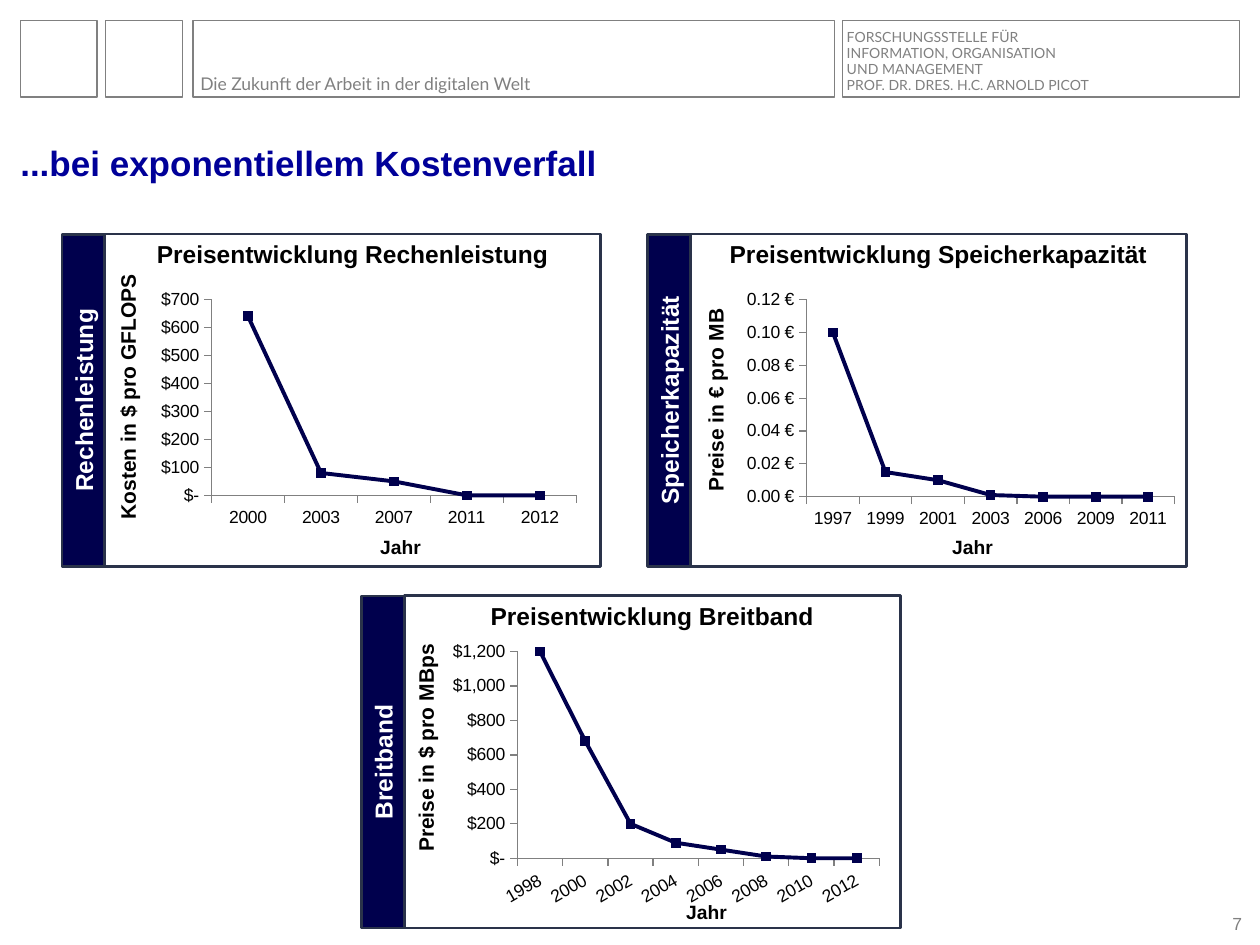
from dataclasses import dataclass

from lxml import etree
from pptx import Presentation
from pptx.chart.data import CategoryChartData
from pptx.dml.color import RGBColor
from pptx.enum.chart import XL_CHART_TYPE as ChartType, XL_MARKER_STYLE as Marker, XL_TICK_MARK as Tick
from pptx.enum.shapes import MSO_SHAPE as Shape
from pptx.enum.text import MSO_ANCHOR as Anchor, PP_ALIGN as Align
from pptx.oxml.ns import qn
from pptx.util import Cm, Pt

WHITE = RGBColor(0xFF, 0xFF, 0xFF)
BLACK = RGBColor(0, 0, 0)
GRAY = RGBColor(0x80, 0x80, 0x80)
NAVY = RGBColor(0, 0, 0x4D)
SLATE = RGBColor(0x2A, 0x33, 0x4A)
BLUE = RGBColor(0, 0, 0x99)

PANEL_WIDTH, PANEL_HEIGHT, STRIP_WIDTH = 10, 6.7, 0.86
DOLLAR = '"$"#,##0;-"$"#,##0;"$-"'
EURO = '#,##0.00\\ "€"'


@dataclass
class Panel:
    name: str
    corner: tuple
    axis_title: str
    axis_center: tuple
    axis_length: float
    year_offset: tuple
    chart_area: tuple
    plot_area: tuple
    years: tuple
    prices: tuple
    price_format: str
    top_price: float
    price_step: float
    year_angle: int = 0


PANELS = (
    Panel("Speicherkapazität", (13.92, 4.72), "Preise in € pro MB", (0.5, 3.35), 4.47,
          (4.72, 6.05), (1, 1.02, 8.94, 5.03), (0.15, 0.06, 0.83, 0.79),
          (1997, 1999, 2001, 2003, 2006, 2009, 2011),
          (0.1, 0.015, 0.01, 0.001, 0, 0, 0), EURO, 0.12, 0.02),
    Panel("Rechenleistung", (2.11, 4.72), "Kosten in $ pro GFLOPS", (0.46, 3.28), 5.33,
          (5, 6.05), (0.81, 1.02, 8.97, 5), (0.15, 0.06, 0.82, 0.79),
          (2000, 2003, 2007, 2011, 2012),
          (640, 80, 50, 0, 0), DOLLAR, 700, 100),
    Panel("Breitband", (8.15, 12.01), "Preise in $ pro MBps", (0.43, 3.07), 4.52,
          (5.13, 6.12), (0.64, 0.79, 9.12, 5.56), (0.18, 0.06, 0.8, 0.75),
          (1998, 2000, 2002, 2004, 2006, 2008, 2010, 2012),
          (1200, 680, 200, 90, 50, 10, 0, 0), DOLLAR, 1200, 200, -30),
)


class SlideBuilder:
    font = "Arial"
    header_font = "Lato"

    def __init__(self, deck):
        self.slide = deck.slides.add_slide(deck.slide_layouts[5])
        self.shapes = self.slide.shapes

    def fill_text(self, shape, text, size, color, bold=False, font=None, align=Align.LEFT,
                  anchor=Anchor.BOTTOM, inset=0, wrap=True, spacing=None):
        frame = shape.text_frame
        frame.text = text
        frame.word_wrap = wrap
        frame.vertical_anchor = anchor
        frame.margin_left = frame.margin_right = Cm(inset)
        frame.margin_top = frame.margin_bottom = Cm(inset)
        for para in frame.paragraphs:
            para.alignment = align
            para.line_spacing = spacing
            for span in para.runs:
                span.font.name = font or self.font
                span.font.size = Pt(size)
                span.font.bold = bold
                span.font.color.rgb = color

    def title(self, text, left, top, width, height):
        title = self.shapes.title
        title.left, title.top = Cm(left), Cm(top)
        title.width, title.height = Cm(width), Cm(height)
        self.fill_text(title, text, 20, BLUE, bold=True)

    def rectangle(self, left, top, width, height, fill=None, line=None, weight=1.5):
        box = self.shapes.add_shape(Shape.RECTANGLE, Cm(left), Cm(top), Cm(width), Cm(height))
        box.shadow.inherit = False
        if fill is None:
            box.fill.background()
        else:
            box.fill.solid()
            box.fill.fore_color.rgb = fill
        if line is None:
            box.line.fill.background()
        else:
            box.line.color.rgb = line
            box.line.width = Pt(weight)
        return box

    def label(self, text, left, top, width, height, size, color, **style):
        box = self.shapes.add_textbox(Cm(left), Cm(top), Cm(width), Cm(height))
        self.fill_text(box, text, size, color, **style)
        return box

    def panel(self, panel):
        left, top = panel.corner
        frame = self.rectangle(left, top, PANEL_WIDTH, PANEL_HEIGHT, WHITE, SLATE)
        self.fill_text(frame, f"Preisentwicklung {panel.name}", 14, BLACK, bold=True,
                       align=Align.CENTER, anchor=Anchor.TOP, inset=0.1)

        strip = self.rectangle(left - (PANEL_HEIGHT + STRIP_WIDTH) / 2,
                               top + (PANEL_HEIGHT - STRIP_WIDTH) / 2,
                               PANEL_HEIGHT, STRIP_WIDTH, NAVY, SLATE)
        strip.rotation = 270
        self.fill_text(strip, panel.name, 14, WHITE, bold=True, align=Align.CENTER,
                       anchor=Anchor.MIDDLE)

        across, down = panel.axis_center
        height = 0.71
        axis_title = self.label(panel.axis_title, left + across - panel.axis_length / 2,
                                top + down - height / 2, panel.axis_length, height,
                                12, BLACK, bold=True, align=Align.CENTER,
                                anchor=Anchor.MIDDLE, inset=0.1, wrap=False)
        axis_title.rotation = 270

        across, down = panel.year_offset
        year = self.rectangle(left + across, top + down, 1.93, 0.48, WHITE)
        self.fill_text(year, "Jahr", 11, BLACK, bold=True, align=Align.CENTER)
        self.chart(panel)

    def chart(self, panel):
        data = CategoryChartData()
        data.categories = [str(year) for year in panel.years]
        data.add_series("Series 1", panel.prices)
        left, top = panel.corner
        across, down, width, height = panel.chart_area
        chart = self.shapes.add_chart(ChartType.LINE_MARKERS, Cm(left + across), Cm(top + down),
                                      Cm(width), Cm(height), data).chart
        chart.has_title = False
        chart.has_legend = False
        chart.font.name = self.font
        chart.font.size = Pt(10)
        chart.font.color.rgb = BLACK

        plot = chart.plots[0]
        plot.vary_by_categories = False
        series = plot.series[0]
        series.smooth = False
        series.format.line.color.rgb = NAVY
        series.format.line.width = Pt(2.25)
        series.marker.style = Marker.SQUARE
        series.marker.size = 5
        series.marker.format.fill.solid()
        series.marker.format.fill.fore_color.rgb = NAVY
        series.marker.format.line.color.rgb = NAVY

        prices, years = chart.value_axis, chart.category_axis
        for axis in (prices, years):
            axis.has_major_gridlines = False
            axis.major_tick_mark = Tick.OUTSIDE
            axis.minor_tick_mark = Tick.NONE
            axis.format.line.color.rgb = GRAY
            axis.format.line.width = Pt(0.75)
            axis.tick_labels.font.size = Pt(10)
        prices.minimum_scale = 0
        prices.maximum_scale = panel.top_price
        prices.major_unit = panel.price_step
        prices.tick_labels.number_format = panel.price_format
        prices.tick_labels.number_format_is_linked = False
        years._element.find(qn("c:txPr")).find(qn("a:bodyPr")).set("rot", str(panel.year_angle * 60000))
        self.place_plot(chart, panel.plot_area)

    def place_plot(self, chart, area):
        plot_area = chart._chartSpace.find(qn("c:chart")).find(qn("c:plotArea"))
        layout = plot_area.find(qn("c:layout"))
        if layout is None:
            layout = etree.Element(qn("c:layout"))
            plot_area.insert(0, layout)
        manual = etree.SubElement(layout, qn("c:manualLayout"))
        settings = [("layoutTarget", "inner"), ("xMode", "edge"), ("yMode", "edge")]
        for tag, value in settings + list(zip("xywh", area)):
            etree.SubElement(manual, qn(f"c:{tag}")).set("val", str(value))


def main():
    deck = Presentation()
    deck.slide_width, deck.slide_height = Cm(25.4), Cm(19.05)
    builder = SlideBuilder(deck)

    for left, width in ((3.89, 12.93), (2.13, 1.55), (0.41, 1.55), (16.99, 8)):
        builder.rectangle(left, 0.41, width, 1.55, line=GRAY, weight=0.75)
    header = {"font": builder.header_font, "spacing": 0.95}
    builder.label("Die Zukunft der Arbeit in der digitalen Welt",
                  4.04, 0.86, 13.64, 1.04, 10, GRAY, **header)
    builder.label("FORSCHUNGSSTELLE FÜR\vINFORMATION, ORGANISATION\vUND MANAGEMENT\n"
                  "PROF. DR. DRES. H.C. ARNOLD PICOT",
                  17.07, 0.71, 6.6, 1.17, 8, GRAY, **header)
    builder.label("7", 24.33, 18.39, 0.71, 0.43, 10, GRAY, align=Align.RIGHT)

    for panel in PANELS:
        builder.panel(panel)
    builder.title("...bei exponentiellem Kostenverfall", 0.41, 2.24, 24.59, 1.47)
    deck.save("out.pptx")


if __name__ == "__main__":
    main()
